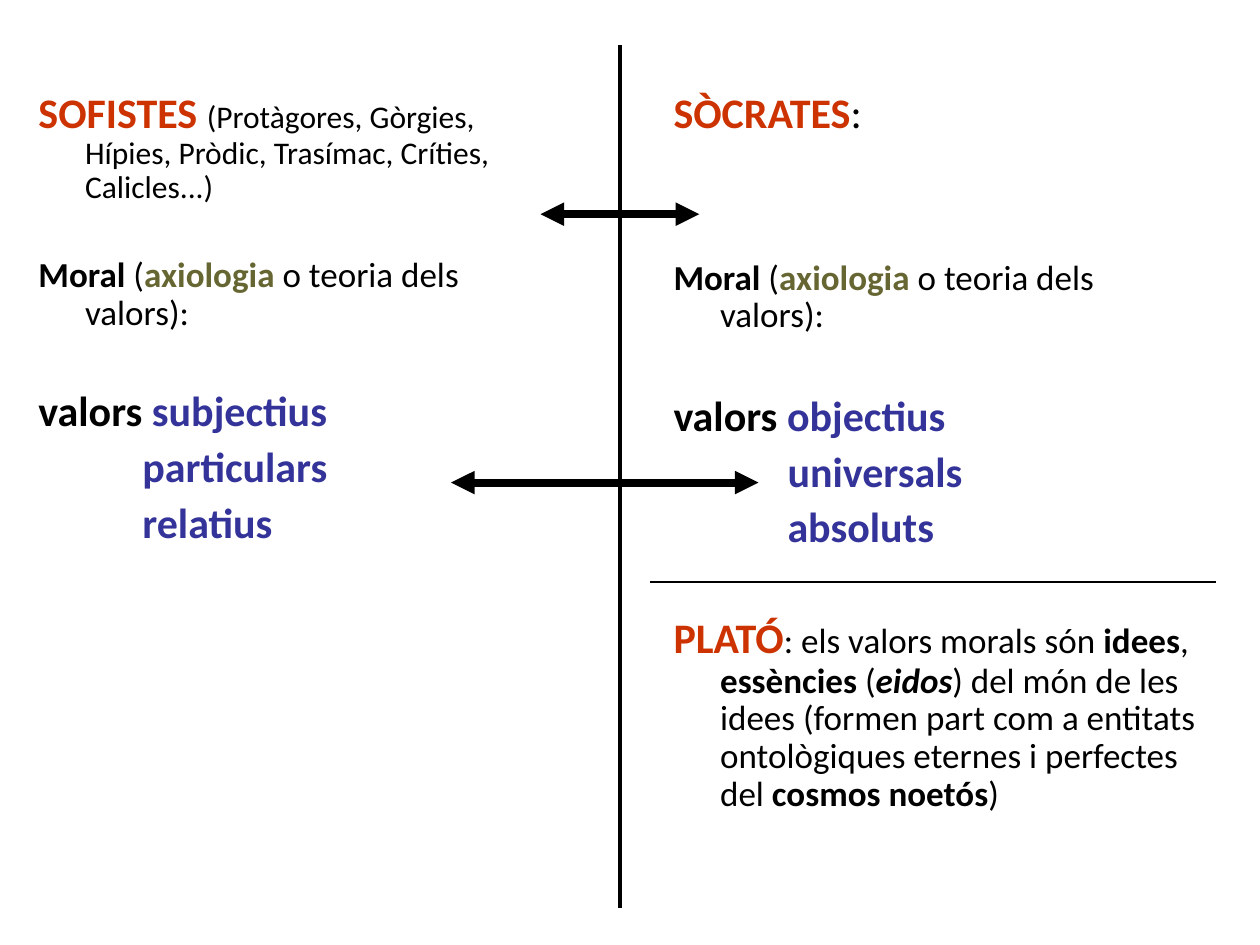
from lxml import etree
from pptx import Presentation
from pptx.dml.color import RGBColor
from pptx.enum.shapes import MSO_CONNECTOR
from pptx.enum.text import MSO_ANCHOR, MSO_AUTO_SIZE, PP_ALIGN
from pptx.oxml.ns import qn
from pptx.util import Inches, Pt

STRAIGHT = MSO_CONNECTOR.STRAIGHT
TOP = MSO_ANCHOR.TOP
NO_AUTOFIT = MSO_AUTO_SIZE.NONE
LEFT = PP_ALIGN.LEFT

CELL = Inches(0.1)
FONT = "Calibri"
BLACK = "000000"
RED = "CC3300"
OLIVE = "666633"
BLUE = "333399"


def grid(cells):
    return int(cells * CELL)


def color(value):
    return RGBColor.from_string(value)


def add_text(paragraph, text, size=20, fill=BLACK, bold=False, italic=False):
    run = paragraph.add_run()
    run.text = text
    font = run.font
    font.name = FONT
    font.size = Pt(size)
    font.bold = bold
    font.italic = italic
    font.color.rgb = color(fill)


def add_paragraph(frame, before=0, margin=3.75, indent=-3.7):
    first = frame.paragraphs[0]
    paragraph = frame.add_paragraph() if first.runs else first
    properties = paragraph._p.get_or_add_pPr()
    properties.set("marL", str(grid(margin)))
    properties.set("indent", str(grid(indent)))
    etree.SubElement(properties, qn("a:buNone"))
    paragraph.alignment = LEFT
    paragraph.line_spacing = 0.9
    paragraph.space_before = Pt(before)
    return paragraph


def prepare_column(placeholder, left, top, width, height):
    placeholder.left, placeholder.top = grid(left), grid(top)
    placeholder.width, placeholder.height = grid(width), grid(height)
    frame = placeholder.text_frame
    frame.word_wrap = True
    frame.auto_size = NO_AUTOFIT
    frame.vertical_anchor = TOP
    return frame


def add_moral(frame, before):
    paragraph = add_paragraph(frame, before)
    add_text(paragraph, "Moral", bold=True)
    add_text(paragraph, " (")
    add_text(paragraph, "axiologia", fill=OLIVE, bold=True)
    add_text(paragraph, " o teoria dels valors):")


def add_values(frame, values, before, margin):
    paragraph = add_paragraph(frame, before)
    add_text(paragraph, "valors ", size=24, bold=True)
    add_text(paragraph, values[0], size=24, fill=BLUE, bold=True)
    for value in values[1:]:
        paragraph = add_paragraph(frame, 6, margin, 0)
        add_text(paragraph, value, size=24, fill=BLUE, bold=True)


def add_plato(frame):
    paragraph = add_paragraph(frame, 37.5)
    add_text(paragraph, "PLATÓ", size=24, fill=RED, bold=True)
    add_text(paragraph, ": els valors morals són ")
    add_text(paragraph, "idees", bold=True)
    add_text(paragraph, ", ")
    add_text(paragraph, "essències", bold=True)
    add_text(paragraph, " (")
    add_text(paragraph, "eidos", bold=True, italic=True)
    add_text(paragraph, ") del món de les idees (formen part com a entitats "
                        "ontològiques eternes i perfectes del ")
    add_text(paragraph, "cosmos noetós", bold=True)
    add_text(paragraph, ")")


def add_line(slide, start, end, width, arrows=False):
    line = slide.shapes.add_connector(STRAIGHT, *map(grid, start + end))
    line.line.width = Pt(width)
    line.line.color.rgb = color(BLACK)
    if arrows:
        outline = line.line._get_or_add_ln()
        for tag in ("a:headEnd", "a:tailEnd"):
            etree.SubElement(outline, qn(tag), type="triangle")
    etree.SubElement(line._element.spPr, qn("a:effectLst"))


def main():
    presentation = Presentation()
    presentation.slide_width = grid(100)
    presentation.slide_height = grid(75)
    slide = presentation.slides.add_slide(presentation.slide_layouts[3])
    title, left_body, right_body = slide.placeholders
    title._element.getparent().remove(title._element)

    sophists = prepare_column(left_body, 2, 6.8, 43.3, 56.6)
    heading = add_paragraph(sophists)
    add_text(heading, "SOFISTES ", size=24, fill=RED, bold=True)
    add_text(heading, "(Protàgores, Gòrgies, Hípies, Pròdic, Trasímac, "
                      "Críties, Calicles...)", size=18)
    add_moral(sophists, 29.5)
    add_values(sophists, ["subjectius", "particulars", "relatius"], 33, 8.3)

    socrates = prepare_column(right_body, 52.4, 6.8, 44.1, 61.4)
    heading = add_paragraph(socrates)
    add_text(heading, "SÒCRATES", size=24, fill=RED, bold=True)
    add_text(heading, ":", size=24)
    add_moral(socrates, 70)
    add_values(socrates, ["objectius", "universals", "absoluts"], 34, 9.1)
    add_plato(socrates)

    add_line(slide, (49.2, 3.6), (49.2, 72.1), 2.25)
    add_line(slide, (51.6, 46.2), (96.5, 46.2), 1.5)
    add_line(slide, (42.9, 17), (55.5, 17), 4.5, arrows=True)
    add_line(slide, (35.8, 38.3), (60.2, 38.3), 4.5, arrows=True)
    presentation.save("out.pptx")


if __name__ == "__main__":
    main()
